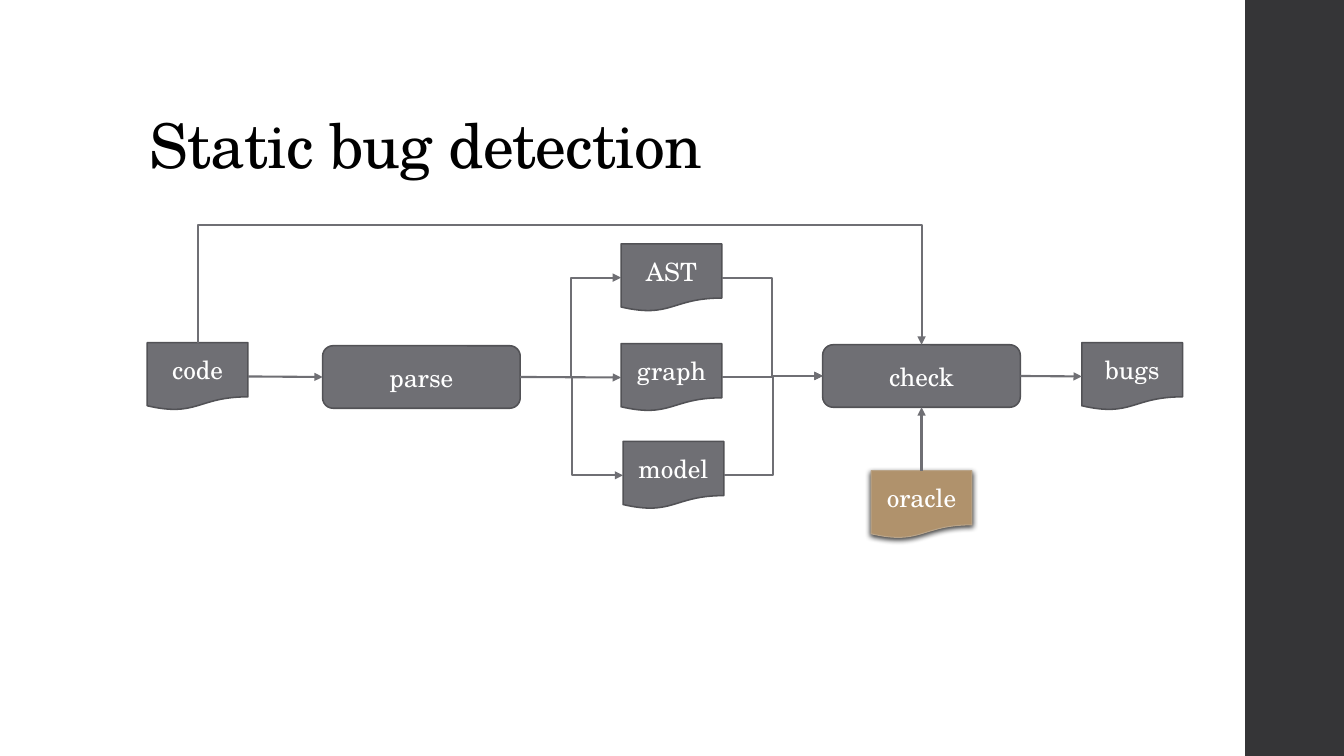
from dataclasses import dataclass

from pptx import Presentation
from pptx import util as u
from pptx.dml.color import RGBColor
from pptx.enum import shapes, text
from pptx.oxml import parse_xml
from pptx.oxml.ns import nsdecls, qn

PX = 9144  # 100 px to the inch
FONT = "TeX Gyre Schola"
COLOURS = {
    "bar": "353537",
    "title": "000000",
    "label": "FFFFFF",
    "node": "6F6F74",
    "node_edge": "525256",
    "oracle": "B0926C",
    "oracle_edge": "B9A489",
    "shadow": "000000",
}
TOP, LEFT, BOTTOM, RIGHT = range(4)
DOCUMENT = shapes.MSO_SHAPE.FLOWCHART_DOCUMENT
PROCESS = shapes.MSO_SHAPE.ROUNDED_RECTANGLE
SIZES = {DOCUMENT: (100, 67), PROCESS: (196, 62)}
STRAIGHT = shapes.MSO_CONNECTOR.STRAIGHT
ELBOW = shapes.MSO_CONNECTOR.ELBOW


@dataclass
class Node:
    label: str
    kind: shapes.MSO_SHAPE
    left: int
    top: int
    fill: str = "node"
    edge: str = "node_edge"
    edge_width: float = 1.1
    shadow: bool = False


@dataclass
class Link:
    start: str
    end: str
    kind: shapes.MSO_CONNECTOR = STRAIGHT
    start_side: int = RIGHT
    end_side: int = LEFT
    lift: int = 0  # height of a detour above the start


NODES = [
    Node("parse", PROCESS, 320, 343),
    Node("code", DOCUMENT, 146, 340),
    Node("graph", DOCUMENT, 616, 341),
    Node("model", DOCUMENT, 618, 438),
    Node("AST", DOCUMENT, 616, 242),
    Node("check", PROCESS, 816, 342),
    Node("oracle", DOCUMENT, 864, 467, "oracle", "oracle_edge", 0.75, True),
    Node("bugs", DOCUMENT, 1073, 340),
]
LINKS = [
    Link("code", "parse"),
    Link("parse", "graph"),
    Link("parse", "AST", ELBOW),
    Link("parse", "model", ELBOW),
    Link("AST", "check", ELBOW),
    Link("graph", "check", ELBOW),
    Link("model", "check", ELBOW),
    Link("code", "check", ELBOW, TOP, TOP, lift=116),
    Link("oracle", "check", STRAIGHT, TOP, BOTTOM),
    Link("check", "bugs"),
]


def px(length: float) -> u.Emu:
    return u.Emu(round(length * PX))


def colour(name: str) -> RGBColor:
    return RGBColor.from_string(COLOURS[name])


def add_run(paragraph, words: str, size: int, colour_name: str):
    run = paragraph.add_run()
    run.text = words
    run.font.name = FONT
    run.font.size = u.Pt(size)
    run.font.color.rgb = colour(colour_name)
    return run


def fill_title(title) -> None:
    title.left, title.top = px(138), px(40)
    title.width, title.height = px(1060), px(145)
    frame = title.text_frame
    frame.auto_size = text.MSO_AUTO_SIZE.NONE
    frame.vertical_anchor = text.MSO_ANCHOR.BOTTOM
    paragraph = frame.paragraphs[0]
    paragraph.alignment = text.PP_ALIGN.LEFT
    paragraph.line_spacing = 0.9
    run = add_run(paragraph, "Static bug detection", 44, "title")
    run.font._element.set("spc", "-50")


def add_bar(slide) -> None:
    bar = slide.shapes.add_shape(
        shapes.MSO_SHAPE.RECTANGLE, px(1235), 0, px(98), px(750))
    bar.shadow.inherit = False
    bar.fill.solid()
    bar.fill.fore_color.rgb = colour("bar")
    bar.line.fill.background()


def add_node(slide, node: Node):
    width, height = SIZES[node.kind]
    shape = slide.shapes.add_shape(
        node.kind, px(node.left), px(node.top), px(width), px(height))
    shape.fill.solid()
    shape.fill.fore_color.rgb = colour(node.fill)
    shape.line.color.rgb = colour(node.edge)
    shape.line.width = u.Pt(node.edge_width)
    shape.shadow.inherit = False
    if node.shadow:
        effects = shape._element.spPr.find(qn("a:effectLst"))
        effects.append(parse_xml(
            f'<a:outerShdw {nsdecls("a")} blurRad="{u.Pt(4)}" dist="{u.Pt(1.2)}" '
            f'dir="5400000" rotWithShape="0"><a:srgbClr val="{COLOURS["shadow"]}">'
            '<a:alpha val="75000"/></a:srgbClr></a:outerShdw>'))
    shape.text_frame.vertical_anchor = text.MSO_ANCHOR.MIDDLE
    paragraph = shape.text_frame.paragraphs[0]
    paragraph.alignment = text.PP_ALIGN.CENTER
    add_run(paragraph, node.label, 18, "label")
    return shape


def raise_detour(connector, lift: int) -> None:
    """Turn an elbow on its side so that it runs above both of its ends."""
    across, down = connector.width, connector.height
    connector.left += (across - down) // 2
    connector.top += (down - across) // 2
    connector.width, connector.height = down, across
    properties = connector._element.spPr
    transform = properties.find(qn("a:xfrm"))
    transform.set("rot", str(270 * 60000))
    transform.set("flipH", "1")
    geometry = properties.find(qn("a:prstGeom"))
    guides = geometry.find(qn("a:avLst"))
    if guides is not None:
        geometry.remove(guides)
    bend = round(-100000 * px(lift) / down)
    geometry.append(parse_xml(
        f'<a:avLst {nsdecls("a")}><a:gd name="adj1" fmla="val {bend}"/></a:avLst>'))


def add_link(slide, link: Link, drawn: dict) -> None:
    connector = slide.shapes.add_connector(link.kind, 0, 0, 0, 0)
    connector.begin_connect(drawn[link.start], link.start_side)
    connector.end_connect(drawn[link.end], link.end_side)
    if link.lift:
        raise_detour(connector, link.lift)
    connector.line.color.rgb = colour("node")
    connector.line.width = u.Pt(1.5)
    properties = connector._element.spPr
    properties.find(qn("a:ln")).append(
        parse_xml(f'<a:tailEnd {nsdecls("a")} type="triangle"/>'))
    properties.append(parse_xml(f'<a:effectLst {nsdecls("a")}/>'))


def main() -> None:
    presentation = Presentation()
    presentation.slide_width, presentation.slide_height = px(1333), px(750)
    slide = presentation.slides.add_slide(presentation.slide_layouts[5])

    # Title and side bar
    add_bar(slide)
    fill_title(slide.shapes.title)

    # Flow chart
    drawn = {node.label: add_node(slide, node) for node in NODES}
    for link in LINKS:
        add_link(slide, link, drawn)

    presentation.save("out.pptx")


if __name__ == "__main__":
    main()
